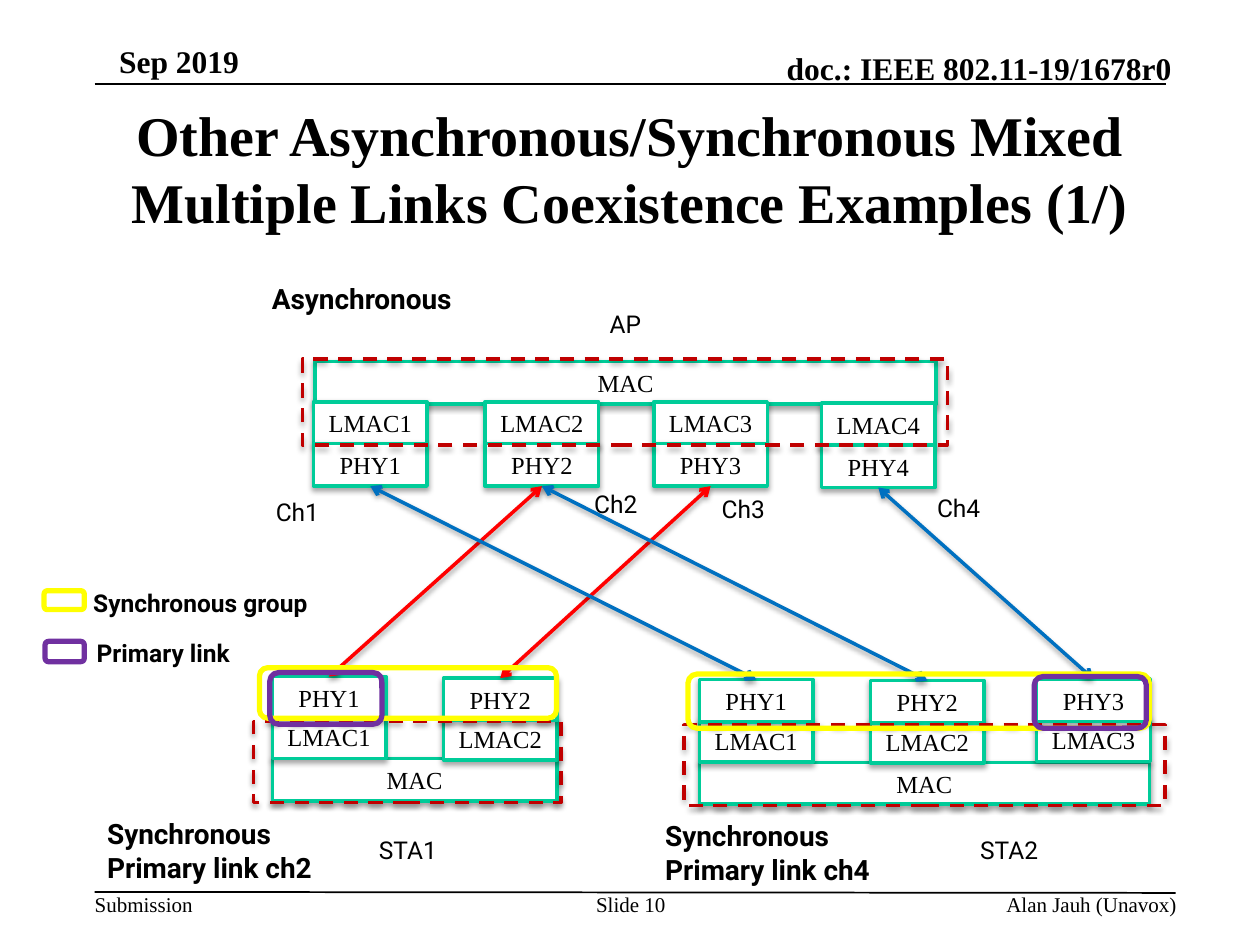
import pptx
import pptx.util
from lxml import etree
from pptx.dml.color import RGBColor
from pptx.enum.dml import MSO_LINE
from pptx.enum.shapes import MSO_CONNECTOR, MSO_SHAPE
from pptx.enum.text import MSO_ANCHOR, PP_ALIGN
from pptx.oxml.ns import qn
from pptx.util import Cm, Pt

BLACK = RGBColor(0x00, 0x00, 0x00)
WHITE = RGBColor(0xFF, 0xFF, 0xFF)
GREEN = RGBColor(0x00, 0xCC, 0x99)
CRIMSON = RGBColor(0xC0, 0x00, 0x00)
RED = RGBColor(0xFF, 0x00, 0x00)
BLUE = RGBColor(0x00, 0x70, 0xC0)
YELLOW = RGBColor(0xFF, 0xFF, 0x00)
PURPLE = RGBColor(0x70, 0x30, 0xA0)

SERIF, SANS = "Times New Roman", "Roboto"
BLOCK_W, BLOCK_H = 2.29, 0.86
INSET, NO_INSET = (0.25, 0.13), (0, 0)
L, C, R = PP_ALIGN.LEFT, PP_ALIGN.CENTER, PP_ALIGN.RIGHT
TOP, MID, BOTTOM = MSO_ANCHOR.TOP, MSO_ANCHOR.MIDDLE, MSO_ANCHOR.BOTTOM

# style: font, size, bold, alignment, anchor, insets
STYLES = {
    "title": (SERIF, 32, True, C, MID, INSET),
    "date": (SERIF, 18, True, C, MID, NO_INSET),
    "document": (SERIF, 18, True, R, BOTTOM, NO_INSET),
    "foot left": (SERIF, 12, False, L, TOP, NO_INSET),
    "foot centre": (SERIF, 12, False, C, TOP, NO_INSET),
    "foot right": (SERIF, 12, False, R, TOP, NO_INSET),
    "block": (SERIF, 14, False, C, MID, (0.13, 0.13)),
    "label": (SANS, 14, False, L, TOP, INSET),
    "legend": (SANS, 14, True, L, TOP, INSET),
    "mode": (SANS, 16, True, L, TOP, INSET),
}

# style, left, top, width, height, paragraphs
TEXTS = [
    ("date", 1.91, 0.74, 3.4, 0.97, ["Sep 2019"]),
    ("document", 13.89, 0.99, 9.73, 0.76, ["doc.: IEEE 802.11-19/1678r0"]),
    ("title", 1.91, 1.91, 21.59, 2.95,
     ["Other Asynchronous/Synchronous Mixed Multiple Links Coexistence Examples (1/)"]),
    ("foot left", 1.91, 17.98, 3, 0.51, ["Submission"]),
    ("foot centre", 11.61, 17.98, 2.21, 1.02, ["Slide 10"]),
    ("foot right", 14.88, 17.98, 8.84, 0.51, ["Alan Jauh (Unavox)"]),
    ("label", 12.04, 6.1, 1.52, 0.86, ["AP"]),
    ("label", 7.39, 16.71, 1.8, 0.86, ["STA1"]),
    ("label", 19.51, 16.71, 1.8, 0.86, ["STA2"]),
    ("label", 5.31, 9.88, 2.18, 0.86, ["Ch1"]),
    ("label", 11.73, 9.73, 2.18, 0.86, ["Ch2"]),
    ("label", 14.3, 9.83, 2.18, 0.86, ["Ch3"]),
    ("label", 18.64, 9.8, 2.18, 0.86, ["Ch4"]),
    ("legend", 1.63, 11.73, 5.49, 0.86, ["Synchronous group"]),
    ("legend", 1.7, 12.73, 5.49, 0.86, ["Primary link"]),
    ("mode", 5.23, 5.54, 4.7, 0.94, ["Asynchronous"]),
    ("mode", 1.91, 16.33, 5.49, 1.63, ["Synchronous", "Primary link ch2"]),
    ("mode", 13.16, 16.38, 5.49, 1.63, ["Synchronous", "Primary link ch4"]),
]

# columns: left edge and vertical nudge of each LMAC/PHY pair
DEVICES = {
    "AP": dict(mac=(6.35, 7.29, 12.52, 0.86), lmac_top=8.1, phy_top=8.94,
               columns=[(6.32, 0), (9.78, 0), (13.18, 0), (16.56, 0.03)],
               frame=(6.1, 7.24, 13, 1.73)),
    "STA1": dict(mac=(5.49, 15.29, 5.74, 0.86), lmac_top=14.43, phy_top=13.64,
                 columns=[(5.49, 0), (8.94, 0.03)],
                 frame=(5.11, 14.55, 6.2, 1.63)),
    "STA2": dict(mac=(14.1, 15.37, 9.07, 0.84), lmac_top=14.5, phy_top=13.7,
                 columns=[(14.1, 0), (17.55, 0.02), (20.9, -0.01)],
                 frame=(13.79, 14.61, 9.7, 1.63)),
}

# AP PHY number, station, station PHY number, colour
LINKS = [(2, "STA1", 1, RED), (3, "STA1", 2, RED), (1, "STA2", 1, BLUE),
         (4, "STA2", 3, BLUE), (2, "STA2", 2, BLUE)]

GROUPS = [
    (YELLOW, 5.23, 13.46, 5.99, 1.02), (PURPLE, 5.44, 13.56, 2.26, 1.04),
    (YELLOW, 13.87, 13.59, 9.3, 1.09), (PURPLE, 20.85, 13.64, 2.26, 1.04),
    (YELLOW, 0.89, 11.91, 0.81, 0.38), (PURPLE, 0.91, 12.93, 0.79, 0.41),
]

RULES = [(1.91, 1.7, 23.5, 1.7), (1.91, 17.98, 23.7, 18)]

prs = pptx.Presentation()
prs.slide_width, prs.slide_height = Cm(25.4), Cm(19.05)
s = prs.slides.add_slide(prs.slide_layouts[6])


def set_all(obj, values):
    for name, value in values.items():
        setattr(obj, name, value)


def write(sp, style, lines):
    font, size, bold, align, anchor, (side, edge) = STYLES[style]
    tf = sp.text_frame
    set_all(tf, dict(word_wrap=True, vertical_anchor=anchor,
                     margin_left=Cm(side), margin_right=Cm(side),
                     margin_top=Cm(edge), margin_bottom=Cm(edge)))
    for i, line in enumerate(lines):
        p = tf.add_paragraph() if i else tf.paragraphs[0]
        p.alignment = align
        r = p.add_run()
        r.text = line
        set_all(r.font, dict(name=font, size=Pt(size), bold=bold))
        r.font.color.rgb = BLACK


def add_shadow(effects):
    """Put a soft downward shadow into an a:effectLst element."""
    shadow = etree.SubElement(effects, qn("a:outerShdw"), blurRad=str(Pt(3)),
                              dist=str(Pt(1.8)), dir="5400000", rotWithShape="0")
    colour = etree.SubElement(shadow, qn("a:srgbClr"), val=str(BLACK))
    etree.SubElement(colour, qn("a:alpha"), val="35000")


def add_box(kind, box, colour, width, fill=None, dash=None, shadow=True):
    sp = s.shapes.add_shape(kind, *map(Cm, box))
    sp.shadow.inherit = False
    if fill is None:
        sp.fill.background()
    else:
        sp.fill.solid()
        sp.fill.fore_color.rgb = fill
    set_all(sp.line, dict(width=Pt(width), dash_style=dash))
    sp.line.color.rgb = colour
    if shadow:
        add_shadow(sp._element.spPr.find(qn("a:effectLst")))
    return sp


def add_block(box, text):
    sp = add_box(MSO_SHAPE.RECTANGLE, box, GREEN, 2, fill=WHITE)
    write(sp, "block", [text])
    return sp


def add_line(ends, colour, width):
    """Return the connector and its empty effect list."""
    cx = s.shapes.add_connector(MSO_CONNECTOR.STRAIGHT, *map(Cm, ends))
    cx.line.width = Pt(width)
    cx.line.color.rgb = colour
    return cx, etree.SubElement(cx._element.spPr, qn("a:effectLst"))


for ends in RULES:
    add_line(ends, BLACK, 1)

phys = {}
for device, d in DEVICES.items():
    add_block(d["mac"], "MAC")
    for layer, top in (("LMAC", d["lmac_top"]), ("PHY", d["phy_top"])):
        for n, (left, nudge) in enumerate(d["columns"], 1):
            sp = add_block((left, top + nudge, BLOCK_W, BLOCK_H), f"{layer}{n}")
            if layer == "PHY":
                phys[device, n] = sp

for ap_phy, station, sta_phy, colour in LINKS:
    cx, effects = add_line((0, 0, 1, 1), colour, 2)
    cx.begin_connect(phys["AP", ap_phy], 2)
    cx.end_connect(phys[station, sta_phy], 0)
    for end in ("a:headEnd", "a:tailEnd"):
        etree.SubElement(cx.line._ln, qn(end), type="arrow")
    add_shadow(effects)

for d in DEVICES.values():
    add_box(MSO_SHAPE.RECTANGLE, d["frame"], CRIMSON, 2, dash=MSO_LINE.DASH)

for colour, *box in GROUPS:
    add_box(MSO_SHAPE.ROUNDED_RECTANGLE, box, colour, 3, shadow=False)

for style, *box, lines in TEXTS:
    write(s.shapes.add_textbox(*map(Cm, box)), style, lines)

prs.save("out.pptx")
